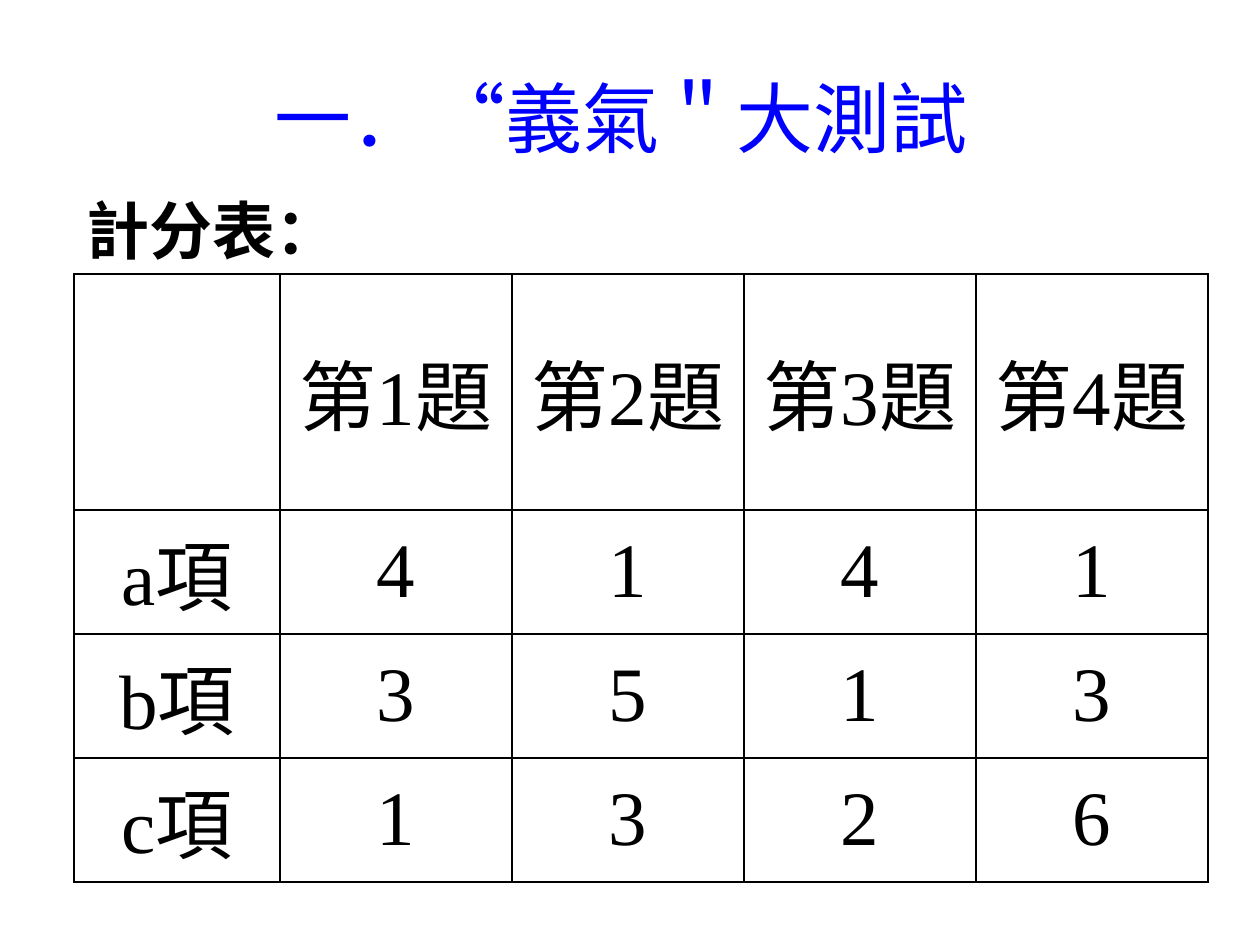
from dataclasses import dataclass

from lxml import etree
from pptx import Presentation
from pptx import util as u
from pptx.dml.color import RGBColor
from pptx.enum import text
from pptx.oxml import ns


@dataclass(frozen=True)
class Theme:
    """Colours, fonts and type sizes of the slide."""
    title: str = "0000FF"
    ink: str = "000000"
    serif: str = "Times New Roman"
    sans: str = "Arial"
    large: int = 44
    label: int = 36
    border: int = 1


THEME = Theme()
SCORES = [
    ["", "第1題", "第2題", "第3題", "第4題"],
    ["a項", "4", "1", "4", "1"],
    ["b項", "3", "5", "1", "3"],
    ["c項", "1", "3", "2", "6"],
]
COLUMN_WIDTHS = [206] + [232] * 4
ROW_HEIGHTS = [236] + [124] * 3
HANGING = 48


def px(length):
    """Turn whole pixels into EMU."""
    return u.Emu(round(length * 914400 / 126))


def style(para, font, size, color, bold=False):
    """Set the font of a paragraph."""
    para.font.name = font
    para.font.size = u.Pt(size)
    para.font.bold = bold
    para.font.color.rgb = RGBColor.from_string(color)


def add_text(page, area, words, anchor, align, **font):
    """Add a one-paragraph text box."""
    box = page.shapes.add_textbox(*map(px, area))
    frame = box.text_frame
    frame.word_wrap = True
    frame.vertical_anchor = anchor
    para = frame.paragraphs[0]
    para.text = words
    para.alignment = align
    style(para, **font)


def add_borders(cell):
    """Draw a thin line on all four sides of a cell."""
    properties = cell._tc.get_or_add_tcPr()
    for position, side in enumerate(("lnL", "lnR", "lnT", "lnB")):
        line = etree.Element(ns.qn(f"a:{side}"), w=str(u.Pt(THEME.border)))
        fill = etree.SubElement(line, ns.qn("a:solidFill"))
        etree.SubElement(fill, ns.qn("a:srgbClr"), val=THEME.ink)
        properties.insert(position, line)


def fill_cell(cell, words):
    """Write one centred cell with a hanging indent."""
    cell.fill.background()
    add_borders(cell)
    cell.vertical_anchor = text.MSO_ANCHOR.MIDDLE
    para = cell.text_frame.paragraphs[0]
    para.text = words
    para.alignment = text.PP_ALIGN.CENTER
    properties = para._p.get_or_add_pPr()
    properties.set("marL", str(px(HANGING)))
    properties.set("indent", str(-px(HANGING)))
    style(para, THEME.serif, THEME.large, THEME.ink)


def add_score_table(page, left, top):
    """Add the bordered score table."""
    table = page.shapes.add_table(
        len(SCORES), len(COLUMN_WIDTHS), px(left), px(top),
        px(sum(COLUMN_WIDTHS)), px(sum(ROW_HEIGHTS))).table
    table.first_row = table.horz_banding = False
    for column, width in zip(table.columns, COLUMN_WIDTHS):
        column.width = px(width)
    for row, height, entries in zip(table.rows, ROW_HEIGHTS, SCORES):
        row.height = px(height)
        for cell, words in zip(row.cells, entries):
            fill_cell(cell, words)


def main():
    """Build and save the slide."""
    deck = Presentation()
    deck.slide_width, deck.slide_height = px(1260), px(945)
    page = deck.slides.add_slide(deck.slide_layouts[6])
    add_text(page, (63, 38, 1134, 158), "一．“義氣＂大測試 ",
             text.MSO_ANCHOR.MIDDLE, text.PP_ALIGN.CENTER,
             font=THEME.serif, size=THEME.large, color=THEME.title)
    add_score_table(page, 74, 274)
    add_text(page, (74, 185, 893, 88), "計分表：",
             text.MSO_ANCHOR.TOP, text.PP_ALIGN.LEFT,
             font=THEME.sans, size=THEME.label, color=THEME.ink, bold=True)
    deck.save("out.pptx")


if __name__ == "__main__":
    main()
